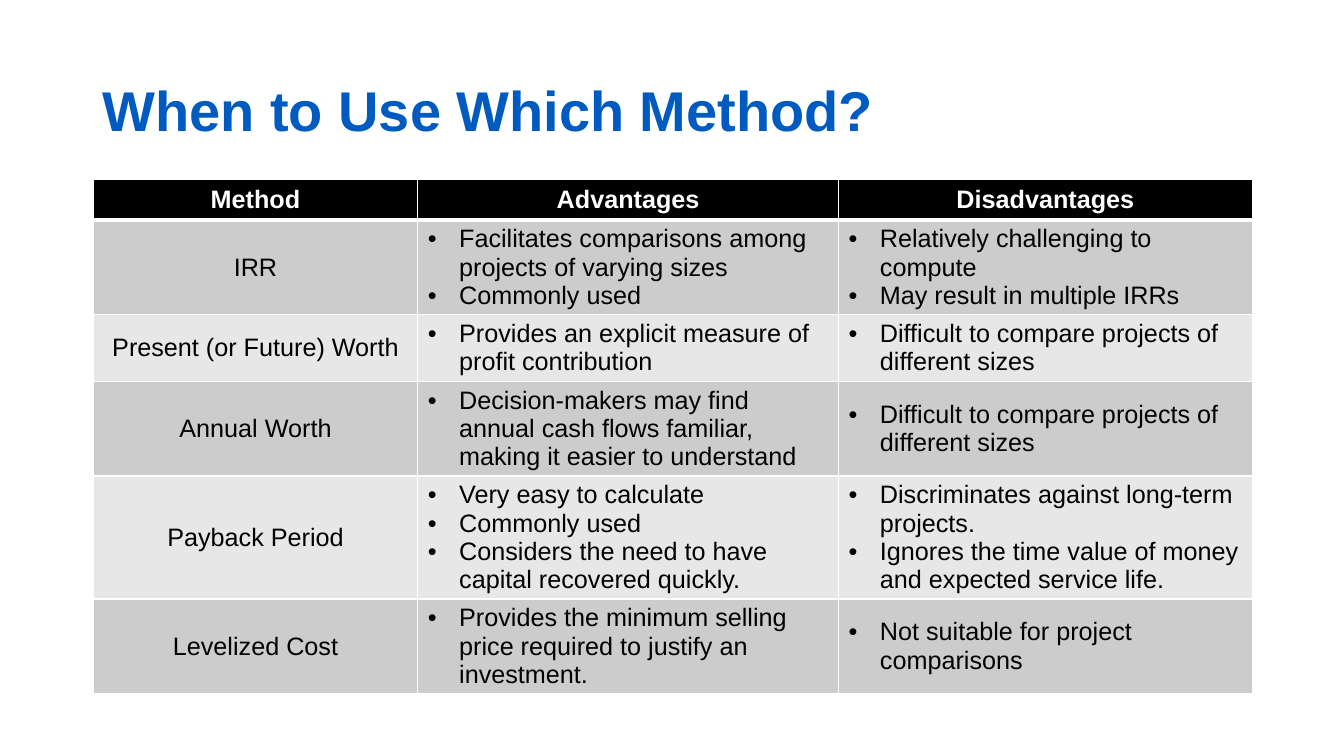
from dataclasses import dataclass

from lxml import etree
from pptx import Presentation
from pptx.dml.color import RGBColor
from pptx.enum.text import MSO_ANCHOR, PP_ALIGN
from pptx.oxml.ns import qn
from pptx.util import Cm, Pt

MIDDLE = MSO_ANCHOR.MIDDLE
LEFT = PP_ALIGN.LEFT
CENTER = PP_ALIGN.CENTER
TITLE_ONLY = 5


@dataclass(frozen=True)
class Theme:
    font: str = "Arial"
    title_size: int = 40
    body_size: int = 18
    blue: str = "005BC0"
    black: str = "000000"
    white: str = "FFFFFF"
    bands: tuple = ("CCCCCC", "E7E7E7")
    thin: int = 1
    thick: int = 3


THEME = Theme()
HEADINGS = ("Method", "Advantages", "Disadvantages")
METHODS = (
    ("IRR", 3,
     ("Facilitates comparisons among projects of varying sizes", "Commonly used"),
     ("Relatively challenging to compute", "May result in multiple IRRs")),
    ("Present (or Future) Worth", 2,
     ("Provides an explicit measure of profit contribution",),
     ("Difficult to compare projects of different sizes",)),
    ("Annual Worth", 3,
     ("Decision-makers may find annual cash flows familiar, making it easier to understand",),
     ("Difficult to compare projects of different sizes",)),
    ("Payback Period", 4,
     ("Very easy to calculate", "Commonly used",
      "Considers the need to have capital recovered quickly."),
     ("Discriminates against long-term projects.",
      "Ignores the time value of money and expected service life.")),
    ("Levelized Cost", 3,
     ("Provides the minimum selling price required to justify an investment.",),
     ("Not suitable for project comparisons",)),
)
COLUMN_SHARES = (0.28, 0.363, 0.357)
HEADER_HEIGHT = 1.03
LINE_HEIGHT = 0.71
CELL_PADDING = 0.25
BULLET_INDENT = Cm(0.79)


def write(para, text, size, color, bold, align):
    span = para.add_run()
    span.text = text
    formats = {"name": THEME.font, "size": Pt(size), "bold": bold}
    for name, value in formats.items():
        setattr(span.font, name, value)
    span.font.color.rgb = RGBColor.from_string(color)
    para.alignment = align


def add_bullet(para):
    properties = para._p.get_or_add_pPr()
    properties.set("marL", str(BULLET_INDENT))
    properties.set("indent", str(-BULLET_INDENT))
    etree.SubElement(properties, qn("a:buFont"), typeface=THEME.font)
    etree.SubElement(properties, qn("a:buChar"), char="•")


def add_borders(cell, top, bottom):
    widths = {"lnL": THEME.thin, "lnR": THEME.thin, "lnT": top, "lnB": bottom}
    properties = cell._tc.get_or_add_tcPr()
    for index, (side, width) in enumerate(widths.items()):
        line = etree.Element(qn(f"a:{side}"), w=str(Pt(width)))
        fill = etree.SubElement(line, qn("a:solidFill"))
        etree.SubElement(fill, qn("a:srgbClr"), val=THEME.white)
        properties.insert(index, line)


def fill_cell(cell, texts, row, bulleted):
    header = row == 0
    background = THEME.black if header else THEME.bands[(row - 1) % 2]
    color = THEME.white if header else THEME.black
    cell.vertical_anchor = MIDDLE
    cell.fill.solid()
    cell.fill.fore_color.rgb = RGBColor.from_string(background)
    add_borders(cell, THEME.thick if row == 1 else THEME.thin,
                THEME.thick if header else THEME.thin)
    frame = cell.text_frame
    for index, text in enumerate(texts):
        para = frame.add_paragraph() if index else frame.paragraphs[0]
        write(para, text, THEME.body_size, color, header, LEFT if bulleted else CENTER)
        if bulleted:
            add_bullet(para)


def place_title(page, text, left, top, width, height):
    title = page.shapes.title
    box = {"left": left, "top": top, "width": width, "height": height}
    for name, value in box.items():
        setattr(title, name, Cm(value))
    title.text_frame.vertical_anchor = MIDDLE
    title.text_frame.word_wrap = True
    para = title.text_frame.paragraphs[0]
    para.line_spacing = 0.9
    write(para, text, THEME.title_size, THEME.blue, True, LEFT)


def place_methods(page, left, top, width):
    heights = [HEADER_HEIGHT]
    heights += [lines * LINE_HEIGHT + CELL_PADDING for _, lines, _, _ in METHODS]
    table = page.shapes.add_table(
        len(heights), len(HEADINGS),
        Cm(left), Cm(top), Cm(width), Cm(sum(heights))).table
    for column, share in zip(table.columns, COLUMN_SHARES):
        column.width = Cm(width * share)
    for row, height in zip(table.rows, heights):
        row.height = Cm(height)
    contents = [[(heading,) for heading in HEADINGS]]
    contents += [((name,), pros, cons) for name, _, pros, cons in METHODS]
    for row, entries in enumerate(contents):
        for column, texts in enumerate(entries):
            fill_cell(table.cell(row, column), texts, row, row > 0 and column > 0)


def main():
    deck = Presentation()
    deck.slide_width, deck.slide_height = Cm(33.87), Cm(19.05)
    page = deck.slides.add_slide(deck.slide_layouts[TITLE_ONLY])
    place_title(page, "When to Use Which Method?", 2.33, 1.01, 29.21, 3.68)
    place_methods(page, 2.35, 4.51, 29.21)
    deck.save("out.pptx")


if __name__ == "__main__":
    main()
